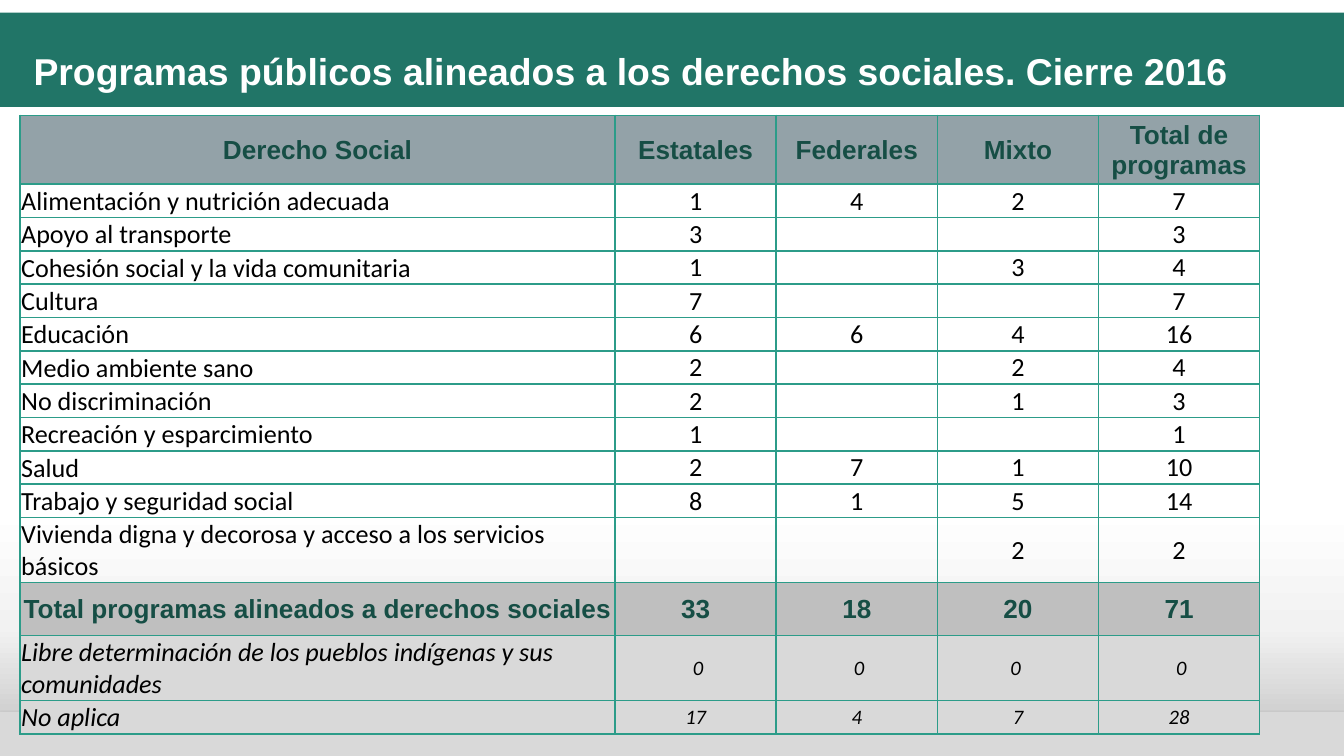
import copy
from dataclasses import dataclass

import pptx
import pptx.dml.color
import pptx.enum.shapes
import pptx.enum.text
import pptx.oxml.ns
import pptx.util
from lxml import etree

Cm = pptx.util.Cm
Pt = pptx.util.Pt
qn = pptx.oxml.ns.qn
ANCHOR = pptx.enum.text.MSO_ANCHOR
ALIGN = pptx.enum.text.PP_ALIGN


@dataclass(frozen=True)
class Theme:
    banner: str = "217567"
    white: str = "FFFFFF"
    floor: str = "D9D9D9"
    fade: tuple = ((0.5, "FFFFFF"), (0.74, "F2F2F2"), (1, "BFBFBF"))
    border: str = "2C9C89"
    strong_text: str = "164E45"
    body_text: str = "000000"
    header_fill: str = "93A2A8"
    total_fill: str = "BFBFBF"
    extra_fill: str = "D9D9D9"
    strong_font: str = "Arial"
    body_font: str = "Calibri"
    title_size: int = 20
    table_size: int = 14
    extra_size: int = 11


@dataclass(frozen=True)
class Box:
    """A region of the slide, in centimetres."""
    left: float
    top: float
    width: float
    height: float

    def place(self, shape):
        shape.left, shape.top = Cm(self.left), Cm(self.top)
        shape.width, shape.height = Cm(self.width), Cm(self.height)


@dataclass(frozen=True)
class RowStyle:
    font: str
    color: str
    fill: str = ""
    bold: bool = False
    italic: bool = False
    value_size: int = 14
    label_align: int = ALIGN.LEFT
    label_anchor: int = ANCHOR.BOTTOM


THEME = Theme()
HEADER = RowStyle(THEME.strong_font, THEME.strong_text, THEME.header_fill, bold=True,
                  label_align=ALIGN.CENTER, label_anchor=ANCHOR.MIDDLE)
BODY = RowStyle(THEME.body_font, THEME.body_text)
TOTAL = RowStyle(THEME.strong_font, THEME.strong_text, THEME.total_fill, bold=True,
                 label_align=ALIGN.CENTER, label_anchor=ANCHOR.MIDDLE)
EXTRA = RowStyle(THEME.body_font, THEME.body_text, THEME.extra_fill, italic=True,
                 value_size=THEME.extra_size)

# Row heights in centimetres
SINGLE, DOUBLE, TOTAL_HEIGHT, HEADER_HEIGHT = 0.63, 1.23, 1.0, 1.3
LABEL_SHARE = 0.48

ROWS = [
    (HEADER, HEADER_HEIGHT, "Derecho Social", "Estatales", "Federales", "Mixto", "Total de programas"),
    (BODY, SINGLE, "Alimentación y nutrición adecuada", "1", "4", "2", "7"),
    (BODY, SINGLE, "Apoyo al transporte", "3", "", "", "3"),
    (BODY, SINGLE, "Cohesión social y la vida comunitaria", "1", "", "3", "4"),
    (BODY, SINGLE, "Cultura", "7", "", "", "7"),
    (BODY, SINGLE, "Educación", "6", "6", "4", "16"),
    (BODY, SINGLE, "Medio ambiente sano", "2", "", "2", "4"),
    (BODY, SINGLE, "No discriminación", "2", "", "1", "3"),
    (BODY, SINGLE, "Recreación y esparcimiento", "1", "", "", "1"),
    (BODY, SINGLE, "Salud", "2", "7", "1", "10"),
    (BODY, SINGLE, "Trabajo y seguridad social", "8", "1", "5", "14"),
    (BODY, DOUBLE, "Vivienda digna y decorosa y acceso a los servicios básicos", "", "", "2", "2"),
    (TOTAL, TOTAL_HEIGHT, "Total programas alineados a derechos sociales", "33", "18", "20", "71"),
    (EXTRA, DOUBLE, "Libre determinación de los pueblos indígenas y sus comunidades",
     " 0", " 0", "0 ", " 0"),
    (EXTRA, SINGLE, "No aplica", "17", "4", "7", "28"),
]


def rgb(value):
    return pptx.dml.color.RGBColor.from_string(value)


def add_band(slide, box, color):
    shape = slide.shapes.add_shape(pptx.enum.shapes.MSO_SHAPE.RECTANGLE, 0, 0, 0, 0)
    box.place(shape)
    shape.shadow.inherit = False
    shape.line.fill.background()
    shape.fill.solid()
    shape.fill.fore_color.rgb = rgb(color)
    return shape


def add_fade(slide, box):
    """Add the backdrop that darkens towards the foot of the slide."""
    shape = add_band(slide, box, THEME.white)
    shape.fill.gradient()
    shape.fill.gradient_angle = 270
    stops = shape._element.spPr.find(qn("a:gradFill")).find(qn("a:gsLst"))
    stops.append(copy.deepcopy(stops[0]))
    for stop, (position, color) in zip(shape.fill.gradient_stops, THEME.fade):
        stop.position = position
        stop.color.rgb = rgb(color)


def add_floor(slide, box):
    shape = add_band(slide, box, THEME.floor)
    effects = shape._element.spPr.find(qn("a:effectLst"))
    shadow = etree.SubElement(effects, qn("a:outerShdw"), blurRad=str(Pt(3.1)),
                              dist=str(Pt(1.8)), dir="5400000", rotWithShape="0")
    color = etree.SubElement(shadow, qn("a:srgbClr"), val="000000")
    etree.SubElement(color, qn("a:alpha"), val="35000")


def format_text(paragraph, font_name, size, color, bold=False, italic=False):
    for run in paragraph.runs:
        run.font.name = font_name
        run.font.size = Pt(size)
        run.font.color.rgb = rgb(color)
        run.font.bold = bold
        run.font.italic = italic


def set_title(slide, box, text):
    title = slide.shapes.title
    box.place(title)
    slide.shapes._spTree.append(title._element)  # in front of the banner
    frame = title.text_frame
    frame.text = text
    frame.word_wrap = True
    frame.auto_size = pptx.enum.text.MSO_AUTO_SIZE.NONE
    frame.vertical_anchor = ANCHOR.MIDDLE
    paragraph = frame.paragraphs[0]
    paragraph.alignment = ALIGN.LEFT
    format_text(paragraph, THEME.strong_font, THEME.title_size, THEME.white, bold=True)


def add_borders(cell):
    properties = cell._tc.get_or_add_tcPr()
    for index, side in enumerate(("a:lnL", "a:lnR", "a:lnT", "a:lnB")):
        line = etree.Element(qn(side), w=str(Pt(1)))
        fill = etree.SubElement(line, qn("a:solidFill"))
        etree.SubElement(fill, qn("a:srgbClr"), val=THEME.border)
        properties.insert(index, line)


def fill_cell(cell, text, style, is_label):
    size = THEME.table_size if is_label else style.value_size
    cell.margin_left = cell.margin_right = cell.margin_top = Cm(0.02)
    cell.margin_bottom = 0
    cell.vertical_anchor = style.label_anchor if is_label else ANCHOR.MIDDLE
    if style.fill:
        cell.fill.solid()
        cell.fill.fore_color.rgb = rgb(style.fill)
    else:
        cell.fill.background()
    add_borders(cell)
    paragraph = cell.text_frame.paragraphs[0]
    paragraph.alignment = style.label_align if is_label else ALIGN.CENTER
    if text:
        paragraph.text = text
        format_text(paragraph, style.font, size, style.color, style.bold, style.italic)
    else:  # keeps an empty cell from stretching its row
        etree.SubElement(paragraph._p, qn("a:endParaRPr"), sz=str(size * 100))


def add_programs_table(slide, box):
    column_count = len(ROWS[0]) - 2
    table = slide.shapes.add_table(len(ROWS), column_count, Cm(box.left), Cm(box.top),
                                   Cm(box.width), Cm(box.height)).table
    table.first_row = table.horz_banding = False
    label_width = box.width * LABEL_SHARE
    value_width = (box.width - label_width) / (column_count - 1)
    for index, column in enumerate(table.columns):
        column.width = Cm(value_width if index else label_width)
    for row, (style, height, *texts) in zip(table.rows, ROWS):
        row.height = Cm(height)
        for index, text in enumerate(texts):
            fill_cell(row.cells[index], text, style, is_label=index == 0)


def main():
    presentation = pptx.Presentation()
    presentation.slide_width, presentation.slide_height = Cm(25.4), Cm(14.29)
    slide = presentation.slides.add_slide(presentation.slide_layouts[5])
    add_fade(slide, Box(0, 4.93, 25.4, 9.36))
    add_floor(slide, Box(0, 13.46, 25.4, 0.83))
    add_band(slide, Box(0, 0.24, 25.4, 1.78), THEME.banner)
    set_title(slide, Box(0.38, 0.46, 25.02, 1.75),
              "Programas públicos alineados a los derechos sociales. Cierre 2016")
    add_programs_table(slide, Box(0.38, 2.18, 23.43, sum(row[1] for row in ROWS)))
    presentation.save("out.pptx")


if __name__ == "__main__":
    main()
